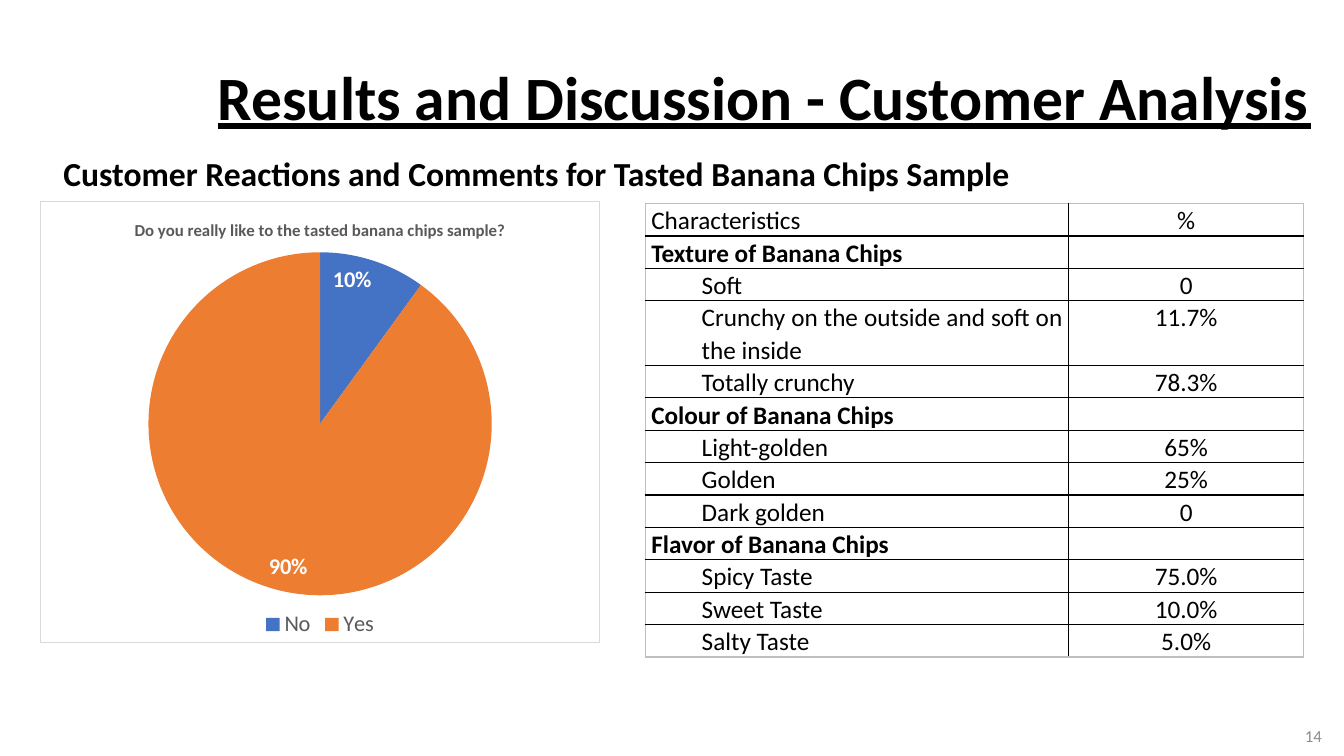
from lxml import etree
from pptx import Presentation
from pptx.chart.data import CategoryChartData
from pptx.dml.color import RGBColor
from pptx.enum.chart import XL_CHART_TYPE as Kind, XL_LABEL_POSITION as Spot, XL_LEGEND_POSITION as Side
from pptx.enum.text import MSO_ANCHOR as Anchor, PP_ALIGN as Align
from pptx.oxml import parse_xml
from pptx.oxml.ns import nsdecls, qn
from pptx.util import Inches, Pt

COLORS = {
    "black": "000000", "white": "FFFFFF", "number": "8C8C8C", "gray": "595959",
    "frame": "D9D9D9", "edge": "BFBFBF", "No": "4472C4", "Yes": "ED7D31",
}


def style(font, size, color, bold=False):
    font.name, font.size, font.bold = "Calibri", Pt(size), bold
    font.color.rgb = RGBColor.from_string(COLORS[color])


def add_text(text, box, size, color, align, bold=False):
    frame = slide.shapes.add_textbox(*map(Inches, box)).text_frame
    frame.word_wrap = True
    frame.text = text
    para = frame.paragraphs[0]
    para.alignment = align
    style(para.runs[0].font, size, color, bold)
    return frame


prs = Presentation()
prs.slide_width, prs.slide_height = Inches(13.33), Inches(7.5)
slide = prs.slides.add_slide(prs.slide_layouts[5])

# Title and subtitle
title = slide.shapes.title
title.left, title.top = Inches(1.83), Inches(0.27)
title.width, title.height = Inches(11.5), Inches(1.45)
title.text_frame.text = "Results and Discussion - Customer Analysis"
title.text_frame.vertical_anchor = Anchor.MIDDLE
para = title.text_frame.paragraphs[0]
para.alignment, para.line_spacing = Align.CENTER, 0.9
style(para.runs[0].font, 44, "black", True)
para.runs[0].font.underline = True

add_text("Customer Reactions and Comments for Tasted Banana Chips Sample",
         (0.53, 1.47, 12.68, 0.5), 24, "black", Align.JUSTIFY, True)
number = add_text("14", (10.21, 7.1, 3, 0.4), 12, "number", Align.RIGHT)
number.vertical_anchor = Anchor.MIDDLE

# Pie chart
data = CategoryChartData()
data.categories = ["No", "Yes"]
data.add_series("Series 1", (10, 90))
chart = slide.shapes.add_chart(Kind.PIE, Inches(0.4), Inches(1.99),
                               Inches(5.55), Inches(4.39), data).chart
style(chart.font, 10, "black")
chart.has_title = True
heading = chart.chart_title.text_frame
heading.text = "Do you really like to the tasted banana chips sample?"
style(heading.paragraphs[0].runs[0].font, 12, "gray", True)
chart.chart_title.include_in_layout = False

chart.has_legend = True
chart.legend.position = Side.BOTTOM
chart.legend.include_in_layout = False
style(chart.legend.font, 16, "gray")

plot = chart.plots[0]
plot.vary_by_categories = True
for i, name in enumerate(("No", "Yes")):
    fill = plot.series[0].points[i].format.fill
    fill.solid()
    fill.fore_color.rgb = RGBColor.from_string(COLORS[name])
labels = plot.series[0].data_labels
labels.show_percentage, labels.show_value = True, False
labels.number_format, labels.number_format_is_linked = "0%", False
labels.position = Spot.INSIDE_END
style(labels.font, 16, "white", True)

# Plot placement and chart frame
space = chart.element
area = space.find(".//" + qn("c:plotArea"))
for old in area.findall(qn("c:layout")):
    area.remove(old)
layout = etree.Element(qn("c:layout"))
manual = etree.SubElement(layout, qn("c:manualLayout"))
for tag, value in (("layoutTarget", "inner"), ("xMode", "edge"), ("yMode", "edge"),
                   ("x", "0.03"), ("y", "0.116"), ("w", "0.94"), ("h", "0.777")):
    etree.SubElement(manual, qn("c:" + tag)).set("val", value)
area.insert(0, layout)
space.find(qn("c:chart")).addnext(parse_xml(
    f'<c:spPr {nsdecls("c", "a")}><a:noFill/><a:ln w="9525"><a:solidFill>'
    f'<a:srgbClr val="{COLORS["frame"]}"/></a:solidFill></a:ln></c:spPr>'))

# Table: rows without a value are group headings
rows = [
    ("Characteristics", "%"),
    ("Texture of Banana Chips", ""),
    ("Soft", "0"),
    ("Crunchy on the outside and soft on the inside", "11.7%"),
    ("Totally crunchy", "78.3%"),
    ("Colour of Banana Chips", ""),
    ("Light-golden", "65%"),
    ("Golden", "25%"),
    ("Dark golden", "0"),
    ("Flavor of Banana Chips", ""),
    ("Spicy Taste", "75.0%"),
    ("Sweet Taste", "10.0%"),
    ("Salty Taste", "5.0%"),
]
last = len(rows) - 1
table = slide.shapes.add_table(len(rows), 2, Inches(6.4), Inches(2.02),
                               Inches(6.53), Inches(4.48)).table
table.first_row = table.horz_banding = False
table.columns[0].width, table.columns[1].width = Inches(4.2), Inches(2.33)
for r, row in enumerate(rows):
    table.rows[r].height = Inches(0.64 if r == 3 else 0.32)
    for c, text in enumerate(row):
        cell = table.cell(r, c)
        cell.margin_left = cell.margin_right = Inches(0.06)
        cell.margin_top = cell.margin_bottom = 0
        cell.fill.background()
        cell.text = text
        para = cell.text_frame.paragraphs[0]
        para.line_spacing = 1.07
        para.alignment = Align.CENTER if c else Align.JUSTIFY if r else Align.LEFT
        if c == 0 and r and row[1]:
            para.level = 1
            props = para._p.get_or_add_pPr()
            props.set("marL", str(Inches(0.5)))
            props.set("indent", "0")
        for run in para.runs:
            style(run.font, 18, "black", not row[1])
        sides = (("L", c == 0), ("R", c == 1), ("T", r == 0), ("B", r == last))
        for i, (side, outer) in enumerate(sides):
            color = COLORS["edge" if outer else "black"]
            cell._tc.get_or_add_tcPr().insert(i, parse_xml(
                f'<a:ln{side} {nsdecls("a")} w="12700"><a:solidFill>'
                f'<a:srgbClr val="{color}"/></a:solidFill></a:ln{side}>'))

prs.save("out.pptx")
